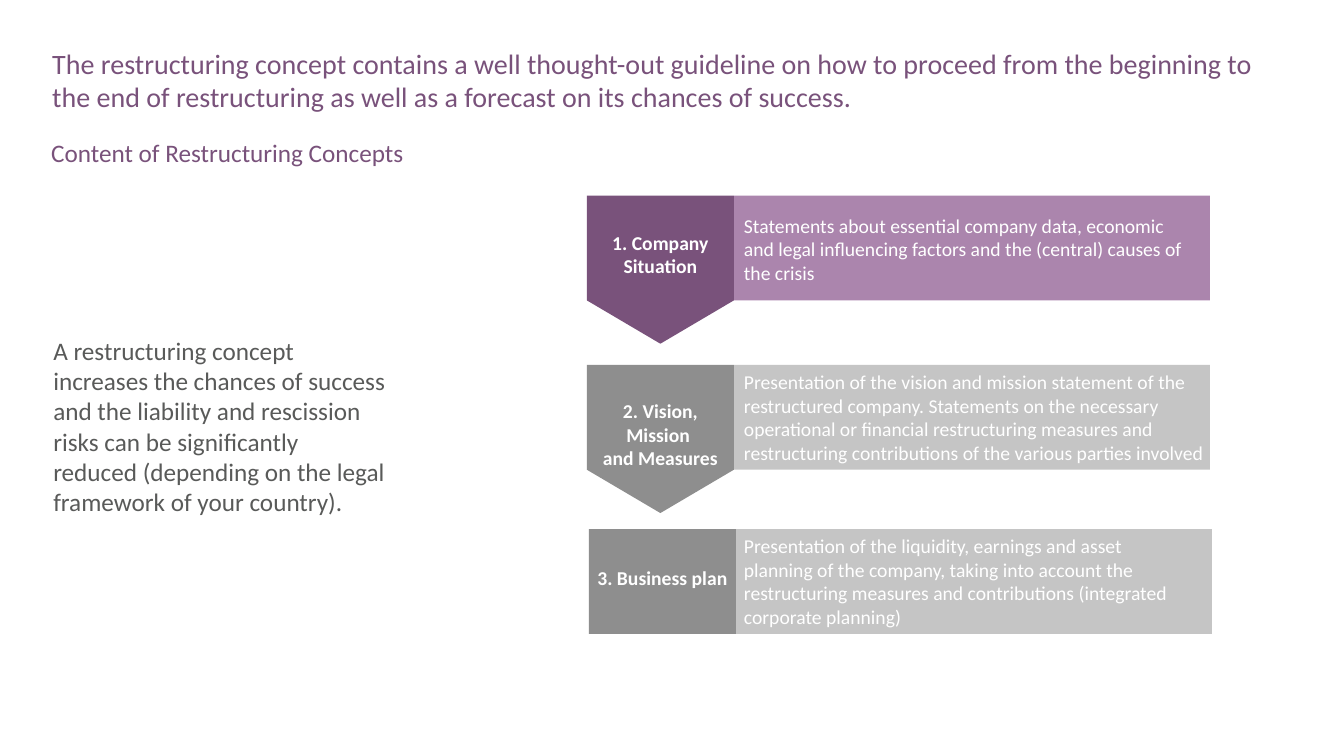
import pptx
import pptx.util
import pptx.dml.color
import pptx.enum.shapes
import pptx.enum.text

Inches = pptx.util.Inches
ANCHOR = pptx.enum.text.MSO_ANCHOR
ALIGN = pptx.enum.text.PP_ALIGN

# Content
COLORS = {"purple": "79527B", "lilac": "AB85AD", "gray": "8E8E8E",
          "silver": "C5C5C5", "body": "595A59", "white": "FFFFFF"}

TITLE = ("The restructuring concept contains a well thought-out guideline on how to proceed "
         "from the beginning to the end of restructuring as well as a forecast on its "
         "chances of success.")
SUBTITLE = "Content of Restructuring Concepts"
SUMMARY = ("A restructuring concept increases the chances of success and the liability and "
           "rescission risks can be significantly reduced (depending on the legal framework "
           "of your country).")

# Label box and detail box: top, height; detail box also has a width
STEPS = [
    {"label": "1. Company Situation",
     "detail": "Statements about essential company data, economic and legal influencing "
               "factors and the (central) causes of the crisis",
     "left": 5.82, "top": 1.94, "arrow": True, "badge": "purple", "bar": "lilac",
     "label_box": (2.24, 0.57), "detail_box": (2.07, 0.81, 4.62)},
    {"label": "2. Vision, Mission \vand Measures",
     "detail": "Presentation of the vision and mission statement of the restructured company. "
               "Statements on the necessary operational or financial restructuring measures "
               "and restructuring contributions of the various parties involved",
     "left": 5.82, "top": 3.62, "arrow": True, "badge": "gray", "bar": "silver",
     "label_box": (3.91, 0.81), "detail_box": (3.62, 1.05, 4.91)},
    {"label": "3. Business plan",
     "detail": "Presentation of the liquidity, earnings and asset planning of the company, "
               "taking into account the restructuring measures and contributions "
               "(integrated corporate planning)",
     "left": 5.84, "top": 5.25, "arrow": False, "badge": "gray", "bar": "silver",
     "label_box": (5.57, 0.34), "detail_box": (5.25, 1.05, 4.62)},
]
BADGE_WIDTH, BAR_WIDTH, BAR_HEIGHT, TIP_HEIGHT = 1.46, 4.72, 1.04, 0.43
LABEL_WIDTH, LABEL_OFFSET, DETAIL_LEFT = 1.58, -0.06, 7.28

presentation = pptx.Presentation()
presentation.slide_width = Inches(13.33)
presentation.slide_height = Inches(7.5)
slide = presentation.slides.add_slide(presentation.slide_layouts[6])


def rgb(color):
    return pptx.dml.color.RGBColor.from_string(COLORS[color])


def paint(shape, color):
    shape.shadow.inherit = False
    shape.fill.solid()
    shape.fill.fore_color.rgb = rgb(color)
    shape.line.fill.background()


def add_text(text, left, top, width, height, size, color,
             bold=False, align=ALIGN.LEFT, anchor=ANCHOR.TOP):
    box = slide.shapes.add_textbox(Inches(left), Inches(top), Inches(width), Inches(height))
    frame = box.text_frame
    frame.word_wrap = True
    frame.vertical_anchor = anchor
    paragraph = frame.paragraphs[0]
    paragraph.text = text
    paragraph.alignment = align
    for run in paragraph.runs:
        run.font.name = "Calibri"
        run.font.size = pptx.util.Pt(size)
        run.font.bold = bold
        run.font.color.rgb = rgb(color)
    return paragraph


def add_rectangle(left, top, width, height, color):
    rectangle = slide.shapes.add_shape(
        pptx.enum.shapes.MSO_SHAPE.RECTANGLE,
        Inches(left), Inches(top), Inches(width), Inches(height))
    paint(rectangle, color)


def add_arrow_badge(left, top, color):
    right, shoulder = left + BADGE_WIDTH, top + BAR_HEIGHT
    outline = [(right, top), (right, shoulder),
               (left + BADGE_WIDTH / 2, shoulder + TIP_HEIGHT), (left, shoulder)]
    builder = slide.shapes.build_freeform(Inches(left), Inches(top))
    builder.add_line_segments([(Inches(x), Inches(y)) for x, y in outline], close=True)
    paint(builder.convert_to_shape(), color)


# Headings and summary
add_text(TITLE, 0.42, 0.41, 12.54, 0.64, 20, "purple")
add_text(SUBTITLE, 0.41, 1.35, 12.56, 0.28, 18, "purple").line_spacing = 0.9
add_text(SUMMARY, 0.43, 1.79, 3.49, 4.87, 18, "body", anchor=ANCHOR.MIDDLE)

# Steps: bar, badge, label and detail
for step in STEPS:
    left, top = step["left"], step["top"]
    add_rectangle(left + BADGE_WIDTH, top, BAR_WIDTH, BAR_HEIGHT, step["bar"])
    if step["arrow"]:
        add_arrow_badge(left, top, step["badge"])
    else:
        add_rectangle(left, top, BADGE_WIDTH, BAR_HEIGHT, step["badge"])
    label_top, label_height = step["label_box"]
    add_text(step["label"], left + LABEL_OFFSET, label_top, LABEL_WIDTH, label_height,
             14, "white", bold=True, align=ALIGN.CENTER)
    detail_top, detail_height, detail_width = step["detail_box"]
    add_text(step["detail"], DETAIL_LEFT, detail_top, detail_width, detail_height, 14, "white")

presentation.save("out.pptx")
